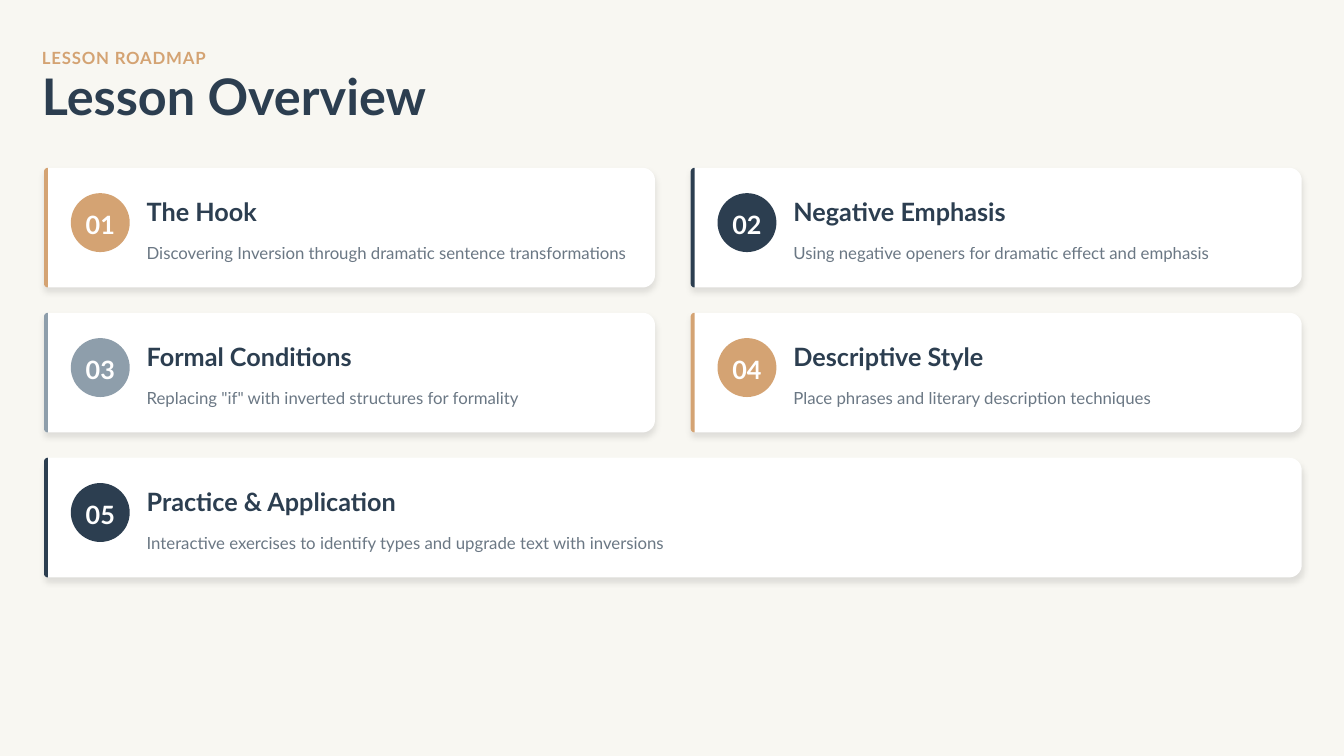
from math import cos, sin, radians
from lxml import etree
from pptx import Presentation
from pptx.dml.color import RGBColor as RGB
from pptx.enum.shapes import MSO_SHAPE as Kind
from pptx.enum.text import MSO_ANCHOR as Anchor, MSO_AUTO_SIZE as Fit, PP_ALIGN as Align
from pptx.oxml.ns import qn
from pptx.util import Cm, Pt

HUES = {"back": "F8F7F2", "card": "FFFFFF", "navy": "2C3E50",
        "sand": "D4A373", "slate": "8E9EAB"}
A = "http://schemas.openxmlformats.org/drawingml/2006/main"
SHADE = (f'<a:effectLst xmlns:a="{A}"><a:outerShdw blurRad="76200" dist="50800" '
         'dir="5400000" algn="ctr" rotWithShape="0"><a:srgbClr val="000000">'
         '<a:alpha val="10000"/></a:srgbClr></a:outerShdw></a:effectLst>')


def write(shape, text, size, hue, bold, gap, align=Align.LEFT):
    """Fill a shape with one formatted line and return its run."""
    frame = shape.text_frame
    frame.text = text
    frame.word_wrap = True
    frame.auto_size = Fit.NONE
    frame.vertical_anchor = Anchor.MIDDLE
    frame.margin_left = frame.margin_right = 0
    frame.margin_top = frame.margin_bottom = 0
    line = frame.paragraphs[0]
    line.alignment = align
    line.line_spacing = gap
    line.space_before = Pt(0)
    run = line.runs[0]
    run.font.name = "Lato"
    run.font.size = Pt(size)
    run.font.bold = bold
    run.font.color.rgb = RGB.from_string(HUES[hue])
    return run


def panel(x, y, wide, high, left, right, hue):
    """Draw a box with one corner radius on the left and one on the right."""
    corners = [(x + wide - right, y + right, right, 270),
               (x + wide - right, y + high - right, right, 0),
               (x + left, y + high - left, left, 90),
               (x + left, y + left, left, 180)]
    dots = [(Cm(cx + r * cos(radians(start + turn))),
             Cm(cy + r * sin(radians(start + turn))))
            for cx, cy, r, start in corners
            for turn in (range(0, 91, 9) if r else [0])]
    path = shapes.build_freeform(*dots[0])
    path.add_line_segments(dots[1:])
    shape = path.convert_to_shape()
    shape.shadow.inherit = False
    shape.fill.solid()
    shape.fill.fore_color.rgb = RGB.from_string(HUES[hue])
    shape.line.fill.background()
    return shape


deck = Presentation()
deck.slide_width, deck.slide_height = Cm(45.16), Cm(25.4)
slide = deck.slides.add_slide(deck.slide_layouts[5])
slide.background.fill.solid()
slide.background.fill.fore_color.rgb = RGB.from_string(HUES["back"])
shapes = slide.shapes

# Heading
label = shapes.add_textbox(Cm(1.41), Cm(1.41), Cm(42.62), Cm(0.85))
run = write(label, "LESSON ROADMAP", 16, "sand", True, 1.3)
run.font._element.set("spc", "80")
title = shapes.title
title.left, title.top, title.width, title.height = Cm(1.41), Cm(2.54), Cm(43.18), Cm(1.69)
write(title, "Lesson Overview", 48, "navy", True, 0.8)

# Cards: two to a row, the last one across both columns
CARDS = [
    ("The Hook", "Discovering Inversion through dramatic sentence transformations", "sand"),
    ("Negative Emphasis", "Using negative openers for dramatic effect and emphasis", "navy"),
    ("Formal Conditions", 'Replacing "if" with inverted structures for formality', "slate"),
    ("Descriptive Style", "Place phrases and literary description techniques", "sand"),
    ("Practice & Application",
     "Interactive exercises to identify types and upgrade text with inversions", "navy"),
]
LEFT, TOP, WIDE, HIGH = 1.48, 5.64, 20.53, 4.02
STEP_X, STEP_Y = 21.73, 4.87

for i, (head, note, hue) in enumerate(CARDS):
    row, col = divmod(i, 2)
    x, y = LEFT + col * STEP_X, TOP + row * STEP_Y
    wide = WIDE + STEP_X if i == len(CARDS) - 1 else WIDE

    card = panel(x, y, wide, HIGH, 0.13, 0.42, "card")
    props = card._element.spPr
    props.replace(props.find(qn("a:effectLst")), etree.fromstring(SHADE))
    panel(x, y, 0.13, HIGH, 0.13, 0, hue)

    disc = shapes.add_shape(Kind.OVAL, Cm(x + 0.9), Cm(y + 0.85), Cm(1.98), Cm(1.98))
    disc.shadow.inherit = False
    disc.fill.solid()
    disc.fill.fore_color.rgb = RGB.from_string(HUES[hue])
    disc.line.fill.background()
    write(disc, f"{i + 1:02}", 24, "card", True, 1.1, Align.CENTER)

    box = shapes.add_textbox(Cm(x + 3.45), Cm(y + 0.85), Cm(wide - 3.87), Cm(1.13))
    write(box, head, 24, "navy", True, 1.1)
    box = shapes.add_textbox(Cm(x + 3.45), Cm(y + 2.26), Cm(wide - 4.02), Cm(0.92))
    run = write(box, note, 16, "navy", False, 1.4)
    tint = run.font._element.find(".//" + qn("a:srgbClr"))
    etree.SubElement(tint, qn("a:alpha")).set("val", "70000")

deck.save("out.pptx")
